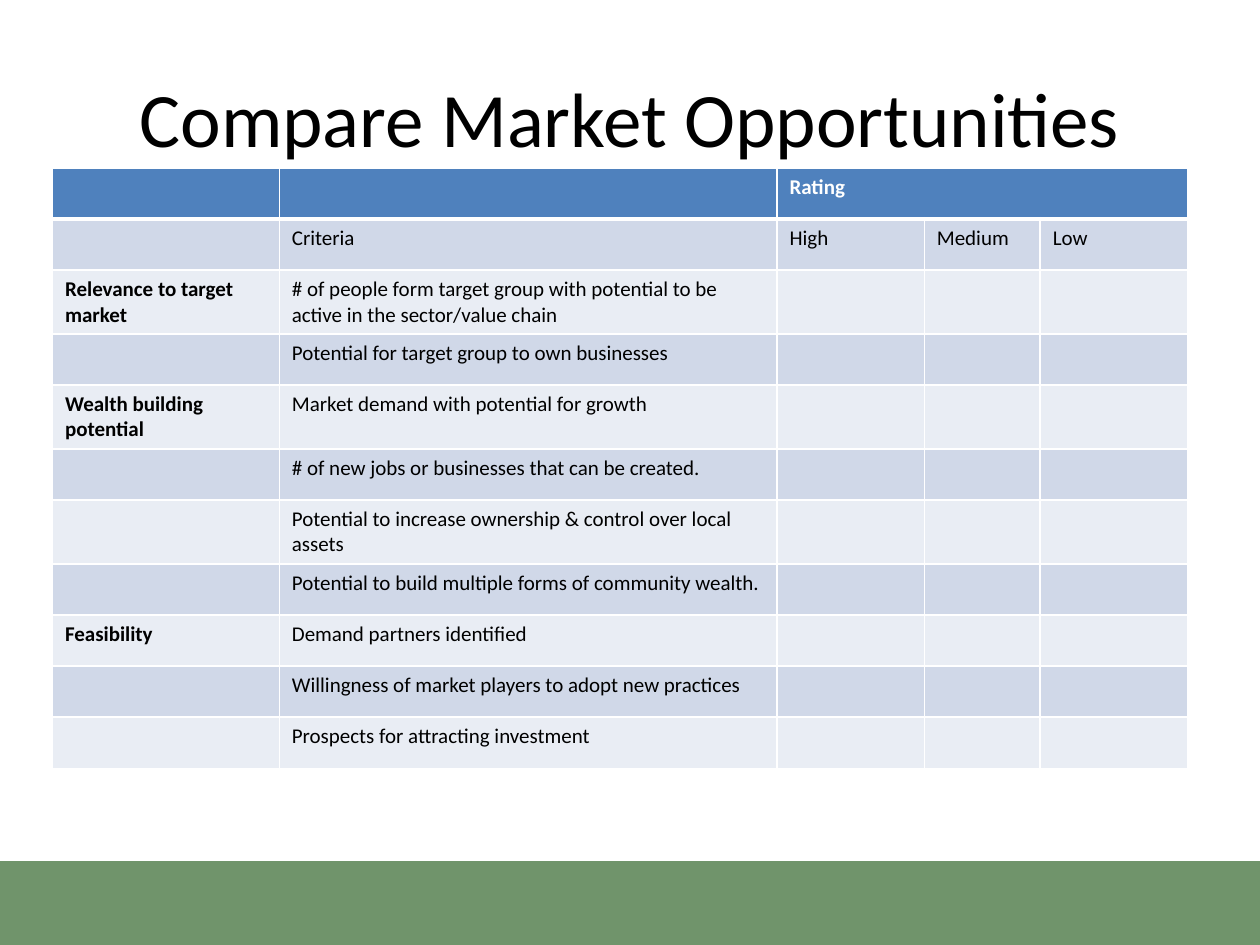
from lxml import etree
from pptx import Presentation
from pptx.dml.color import RGBColor
from pptx.enum.shapes import MSO_SHAPE
from pptx.enum.text import MSO_ANCHOR, PP_ALIGN
from pptx.oxml.ns import qn
from pptx.util import Pt

RECTANGLE = MSO_SHAPE.RECTANGLE
MIDDLE = MSO_ANCHOR.MIDDLE
LEFT, CENTER = PP_ALIGN.LEFT, PP_ALIGN.CENTER
TITLE_ONLY = 5

FONT = "Calibri"
COLORS = {
    "text": "000000",
    "white": "FFFFFF",
    "header": "4F81BD",
    "dark_band": "D0D8E8",
    "light_band": "E9EDF4",
    "footer": "70946B",
}
COLUMN_WIDTHS = [129.6, 284.4, 84.24, 66.24, 84.24]
ROW_HEIGHT, TALL_ROW_HEIGHT = 29.2, 36.5
TALL_ROWS = {2, 4, 6}
ROWS = [
    ("", "", "Rating"),
    ("", "Criteria", "High", "Medium", "Low"),
    ("Relevance to target market",
     "# of people form target group with potential to be active in the sector/value chain"),
    ("", "Potential for target group to own businesses"),
    ("Wealth building potential", "Market demand with potential for growth"),
    ("", "# of new jobs or businesses that can be created."),
    ("", "Potential to increase ownership & control over local assets"),
    ("", "Potential to build multiple forms of community wealth."),
    ("Feasibility", "Demand partners identified"),
    ("", "Willingness of market players to adopt new practices"),
    ("", "Prospects for attracting investment"),
]


def rgb(name):
    return RGBColor.from_string(COLORS[name])


def write_text(text_frame, text, size=12, color="text", bold=False, align=LEFT):
    paragraph = text_frame.paragraphs[0]
    paragraph.alignment = align
    run = paragraph.add_run()
    run.text = text
    run.font.name = FONT
    run.font.size = Pt(size)
    run.font.bold = bold
    run.font.color.rgb = rgb(color)


def set_borders(cell, top=1, bottom=1):
    """Draw white cell borders; call before the cell gets its fill."""
    properties = cell._tc.get_or_add_tcPr()
    for tag, width in (("a:lnL", 1), ("a:lnR", 1), ("a:lnT", top), ("a:lnB", bottom)):
        line = etree.SubElement(properties, qn(tag), w=str(Pt(width)))
        fill = etree.SubElement(line, qn("a:solidFill"))
        etree.SubElement(fill, qn("a:srgbClr"), val=COLORS["white"])


def add_title(slide, left, top, width, height):
    title = slide.shapes.title
    title.left, title.top = Pt(left), Pt(top)
    title.width, title.height = Pt(width), Pt(height)
    title.text_frame.word_wrap = True
    title.text_frame.vertical_anchor = MIDDLE
    write_text(title.text_frame, "Compare Market Opportunities", size=44, align=CENTER)


def add_footer_band(slide, left, top, width, height):
    band = slide.shapes.add_shape(RECTANGLE, Pt(left), Pt(top), Pt(width), Pt(height))
    band.shadow.inherit = False
    band.fill.solid()
    band.fill.fore_color.rgb = rgb("footer")
    band.line.fill.background()


def row_fill(row):
    if row == 0:
        return "header"
    return "dark_band" if row % 2 else "light_band"


def add_rating_table(slide, left, top):
    heights = [TALL_ROW_HEIGHT if row in TALL_ROWS else ROW_HEIGHT
               for row in range(len(ROWS))]
    frame = slide.shapes.add_table(
        len(ROWS), len(COLUMN_WIDTHS), Pt(left), Pt(top),
        Pt(sum(COLUMN_WIDTHS)), Pt(sum(heights)))
    table = frame.table
    for column, width in zip(table.columns, COLUMN_WIDTHS):
        column.width = Pt(width)
    for row, texts in enumerate(ROWS):
        table.rows[row].height = Pt(heights[row])
        for column in range(len(COLUMN_WIDTHS)):
            cell = table.cell(row, column)
            set_borders(cell, top=3 if row == 1 else 1, bottom=3 if row == 0 else 1)
            cell.fill.solid()
            cell.fill.fore_color.rgb = rgb(row_fill(row))
            if column < len(texts) and texts[column]:
                write_text(cell.text_frame, texts[column],
                           color="white" if row == 0 else "text",
                           bold=row == 0 or column == 0)
    table.cell(0, 2).merge(table.cell(0, 4))


def main():
    presentation = Presentation()
    presentation.slide_width, presentation.slide_height = Pt(720), Pt(540)
    slide = presentation.slides.add_slide(presentation.slide_layouts[TITLE_ONLY])
    add_footer_band(slide, 0, 492, 720, 48)
    add_title(slide, 36, 21.6, 648, 90)
    add_rating_table(slide, 30, 96)
    presentation.save("out.pptx")


if __name__ == "__main__":
    main()
